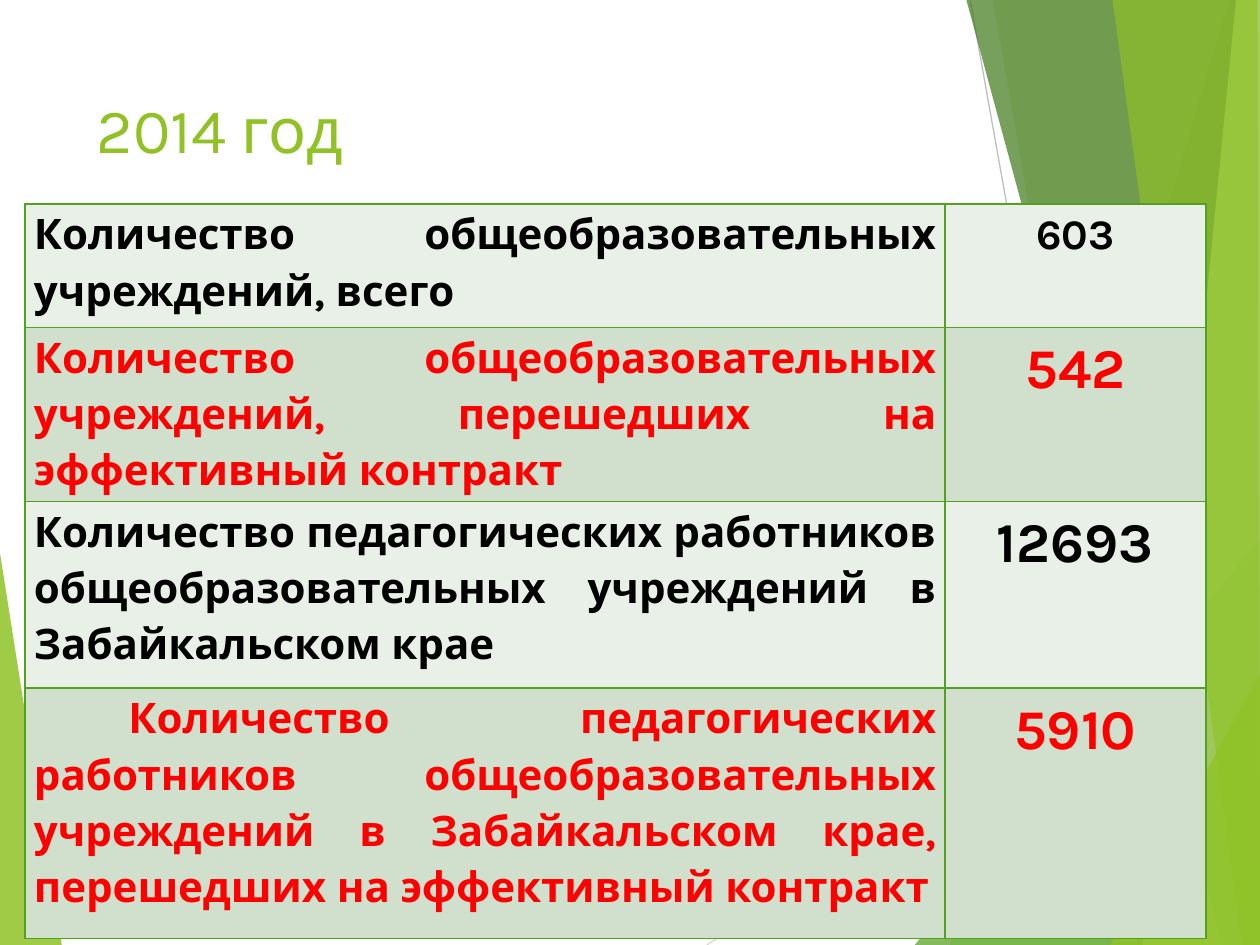
from lxml import etree
from pptx import Presentation
from pptx.dml.color import RGBColor
from pptx.enum.shapes import MSO_CONNECTOR as Conn
from pptx.enum.text import MSO_ANCHOR as Anchor, PP_ALIGN as Align
from pptx.oxml import parse_xml
from pptx.oxml.ns import nsdecls, qn
from pptx.util import Inches, Pt

GREEN, LEAF = "90C226", "54A021"
BLACK, RED = "000000", "FF0000"
W, H = 10, 7.5


def rgb(code):
    return RGBColor.from_string(code)


def write(par, text, size, color, bold=False):
    run = par.add_run()
    run.text = text
    font = run.font
    font.name, font.size, font.bold = "Karla", Pt(size), bold
    font.color.rgb = rgb(color)


prs = Presentation()
prs.slide_width, prs.slide_height = Inches(W), Inches(H)
slide = prs.slides.add_slide(prs.slide_layouts[6])
shapes = slide.shapes

# Thin lines behind the facets
lines = [(5.61, H, W, 4.57, "D9D9D9"), (7.7, 0, 9.04, H, "BFBFBF")]
for x1, y1, x2, y2, color in lines:
    line = shapes.add_connector(
        Conn.STRAIGHT, Inches(x1), Inches(y1), Inches(x2), Inches(y2))
    line.line.color.rgb = rgb(color)
    line.line.width = Pt(0.75)
    etree.SubElement(line._element.spPr, qn("a:effectLst"))

# Translucent facets: colour, opacity in percent, corners
facets = [
    (GREEN, 85, [(0, 4.39), (0.49, H), (0, H)]),
    (GREEN, 30, [(9.75, 0), (7.54, H), (W, H), (W, 0)]),
    (GREEN, 20, [(7.88, 0), (9.19, H), (W, H), (W, 0)]),
    (LEAF, 72, [(7.26, H), (W, 4.29), (W, H)]),
    ("3F7819", 70, [(7.67, 0), (9.7, H), (W, H), (W, 0)]),
    ("C0E474", 70, [(9.81, 0), (9.07, H), (W, H), (W, 0)]),
    (GREEN, 65, [(8.83, 0), (9.86, H), (W, H), (9.98, 0)]),
    (GREEN, 80, [(8.81, H), (W, 5.35), (W, H)]),
]
for color, alpha, points in facets:
    first, *rest = [(Inches(x), Inches(y)) for x, y in points]
    pen = shapes.build_freeform(*first)
    pen.add_line_segments(rest, close=True)
    facet = pen.convert_to_shape()
    facet.shadow.inherit = False
    facet.line.fill.background()
    facet.fill.solid()
    facet.fill.fore_color.rgb = rgb(color)
    tint = facet._element.spPr.find(qn("a:solidFill"))[0]
    etree.SubElement(tint, qn("a:alpha"), val=str(alpha * 1000))

title = shapes.add_textbox(
    Inches(0.67), Inches(0.67), Inches(6.94), Inches(1.44))
frame = title.text_frame
frame.word_wrap = True
frame.vertical_anchor = Anchor.TOP
write(frame.paragraphs[0], "2014 год", 36, GREEN)

# Label, value, value size, row height
rows = [
    ("Количество общеобразовательных учреждений, всего", "603", 24, 0.98),
    ("Количество общеобразовательных учреждений, перешедших на "
     "эффективный контракт", "542", 32, 1.34),
    ("Количество педагогических работников общеобразовательных учреждений "
     "в Забайкальском крае", "12693", 32, 1.48),
    ("Количество педагогических работников общеобразовательных учреждений "
     "в Забайкальском крае, перешедших на эффективный контракт",
     "5910", 32, 1.99),
]
table = shapes.add_table(
    len(rows), 2, Inches(0.2), Inches(1.62), Inches(9.37), Inches(5.79)).table
table.first_row = table.horz_banding = False
for col, width in zip(table.columns, (7.3, 2.07)):
    col.width = Inches(width)

for i, (label, value, size, height) in enumerate(rows):
    table.rows[i].height = Inches(height)
    back, ink = [("E9F0E8", BLACK), ("D1DFCD", RED)][i % 2]
    texts = [(label, 24, Align.JUSTIFY), (value, size, Align.CENTER)]
    for j, (text, points, align) in enumerate(texts):
        cell = table.cell(i, j)
        cell.margin_left = cell.margin_right = Inches(0.07)
        cell.margin_top = cell.margin_bottom = 0
        cell.fill.solid()
        cell.fill.fore_color.rgb = rgb(back)
        par = cell.text_frame.paragraphs[0]
        par.alignment, par.line_spacing = align, 1.15
        write(par, text, points, ink, bold=True)
        props = cell._tc.get_or_add_tcPr()
        for k, side in enumerate("LRTB"):
            props.insert(k, parse_xml(
                f'<a:ln{side} {nsdecls("a")} w="{Pt(1)}"><a:solidFill>'
                f'<a:srgbClr val="{LEAF}"/></a:solidFill></a:ln{side}>'))

# The last label starts with an indent
last = table.cell(len(rows) - 1, 0).text_frame.paragraphs[0]
last._p.get_or_add_pPr().set("indent", str(Inches(0.75)))

prs.save("out.pptx")
